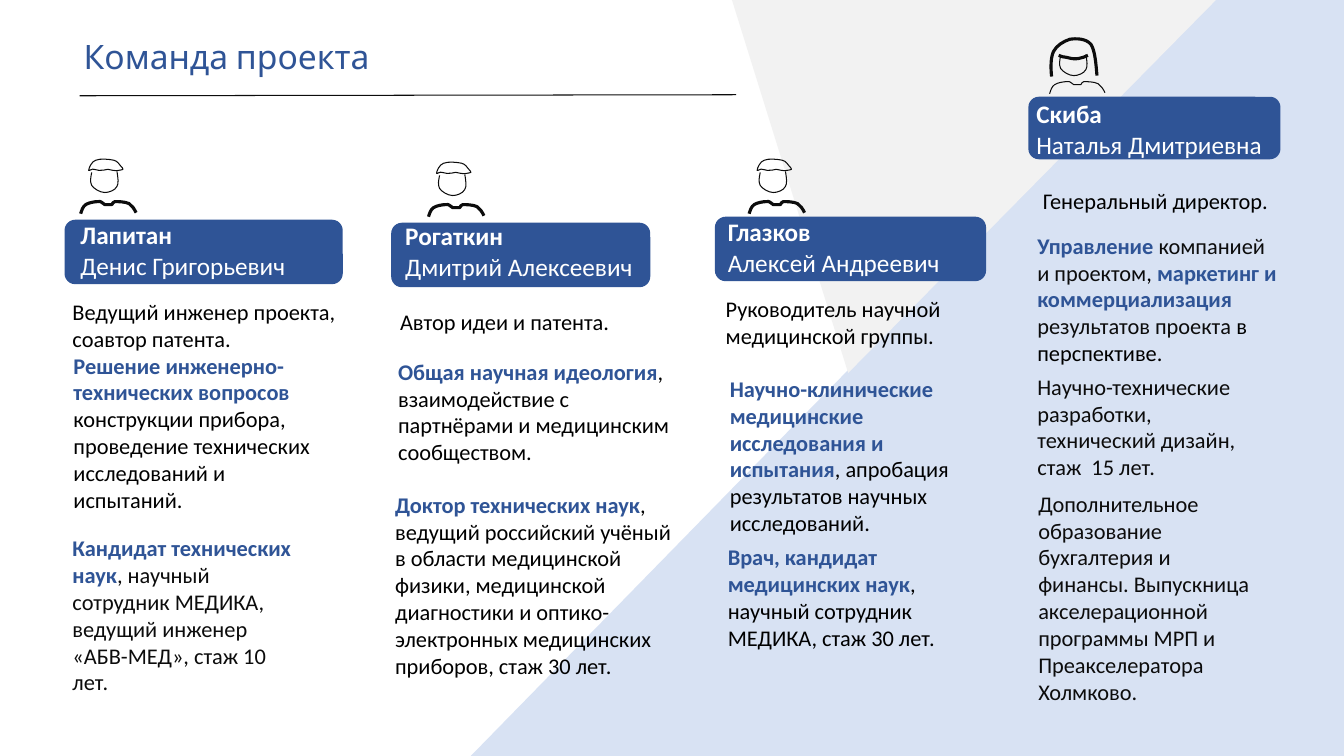
from dataclasses import dataclass

from lxml.etree import Element, SubElement
from pptx import Presentation
from pptx.dml.color import RGBColor
from pptx.enum.shapes import MSO_CONNECTOR, MSO_SHAPE as SHAPE
from pptx.enum.text import MSO_ANCHOR, MSO_AUTO_SIZE as FIT, PP_ALIGN as ALIGN
from pptx.oxml.ns import qn
from pptx.util import Inches, Pt

COLORS = {"navy": "2F5496", "sky": "D8E2F3", "grey": "F2F2F2",
          "white": "FFFFFF", "black": "000000", "ink": "0C0C0C"}

# Icon outlines in hundredths of an inch: a start point, then cubic curves
FACE = [(11, 14), (10, 19, 9, 23, 11, 27), (13, 30, 19, 34, 24, 34),
        (28, 34, 34, 32, 36, 28), (38, 25, 37, 19, 36, 13)]
SHOULDERS = [(0, 55), (1, 52, 2, 48, 5, 46), (8, 44, 14, 43, 17, 43),
             (21, 42, 21, 45, 24, 46), (26, 46, 29, 46, 31, 46),
             (33, 45, 31, 43, 34, 43), (37, 43, 44, 43, 48, 45),
             (51, 47, 53, 50, 55, 54)]
SHORT_HAIR = [(40, 8), (38, 6, 37, 3, 33, 2), (29, 1, 19, 0, 15, 2),
              (11, 3, 8, 10, 8, 12), (8, 13, 12, 10, 13, 11),
              (15, 11, 16, 12, 18, 12), (21, 13, 24, 11, 27, 11),
              (29, 11, 30, 12, 32, 12), (34, 13, 37, 12, 38, 12),
              (40, 11, 42, 12, 42, 11), (42, 10, 41, 9, 40, 8)]
LONG_HAIR = [(2, 38), (1, 29, 1, 19, 4, 13), (7, 7, 14, 3, 20, 1),
             (26, 0, 36, 0, 41, 6), (45, 12, 46, 25, 47, 37)]
FRINGE = [(9, 17), (12, 18, 14, 19, 17, 19), (21, 20, 25, 21, 29, 20),
          (32, 20, 35, 18, 38, 17)]
THIN, THICK = 0.75, 2.25

# Each icon part: outline, downward shift, line width
MAN = [(FACE, 0, THIN), (SHORT_HAIR, 0, THIN), (SHOULDERS, 0, THICK)]
WOMAN = [(FACE, 3, THIN), (SHOULDERS, 0, THIN), (LONG_HAIR, 0, THICK), (FRINGE, 0, THICK)]


@dataclass
class Member:
    """Offsets of icon, name and notes are measured from the badge corner."""
    surname: str
    given_names: str
    badge: tuple
    icon: list
    icon_offset: tuple
    name_box: tuple
    notes: list
    role_align: ALIGN = ALIGN.LEFT


def strong(text, color="navy"):
    return text, color, True


def plain(text, color="black"):
    return text, color, False


TEAM = [
    Member("Глазков", "Алексей Андреевич", (7.09, 2.15, 2.69, 0.64),
           MAN, (0.34, -0.58), (0.03, -0.05, 2.71, 0.98), [
               ((0.01, 0.73, 3, 0.64), [plain("Руководитель научной медицинской группы.")]),
               ((0.05, 1.52, 2.87, 1.72), [
                   strong("Научно-клинические медицинские исследования и испытания"),
                   plain(", апробация результатов научных исследований.")]),
               ((0.03, 3.19, 2.84, 1.18), [
                   strong("Врач, кандидат медицинских наук"),
                   plain(", научный сотрудник МЕДИКА, стаж 30 лет.")])]),
    Member("Рогаткин", "Дмитрий Алексеевич", (3.88, 2.21, 2.57, 0.64),
           MAN, (0.37, -0.61), (0.04, -0.07, 2.66, 0.98), [
               ((-0.01, 0.8, 3, 0.37), [plain("Автор идеи и патента.")]),
               ((-0.03, 1.29, 2.91, 1.18), [
                   strong("Общая научная идеология"),
                   plain(", взаимодействие с партнёрами и медицинским сообществом.")]),
               ((-0.06, 2.61, 3.05, 1.99), [
                   strong("Доктор технических наук"),
                   plain(", ведущий российский учёный в области медицинской физики, "
                         "медицинской диагностики и оптико-электронных медицинских "
                         "приборов, стаж 30 лет.")])]),
    Member("Скиба", "Наталья Дмитриевна", (10.2, 0.96, 2.5, 0.62),
           WOMAN, (0.21, -0.58), (-0.02, -0.03, 2.73, 0.71), [
               ((0.01, 0.85, 2.5, 0.37), [plain("Генеральный директор.")]),
               ((-0.01, 1.29, 2.58, 1.45), [
                   strong("Управление "), plain("компанией и проектом", "ink"), plain(", "),
                   strong("маркетинг и коммерциализация "),
                   plain("результатов проекта ", "ink"), plain("в перспективе.")]),
               ((-0.01, 2.69, 2.34, 1.18), [
                   plain("Научно-технические разработки, технический дизайн, "
                         "стаж  15 лет.", "ink")]),
               ((0, 3.85, 2.34, 2.26), [
                   plain("Дополнительное образование бухгалтерия и финансы. Выпускница "
                         "акселерационной программы МРП и Преакселератора Холмково.",
                         "ink")])],
           role_align=ALIGN.CENTER),
    Member("Лапитан", "Денис Григорьевич", (0.64, 2.18, 2.76, 0.64),
           MAN, (0.16, -0.61), (0.06, -0.05, 2.66, 0.98), [
               ((-0.02, 0.73, 2.88, 0.64), [plain("Ведущий инженер проекта, соавтор патента.")]),
               ((-0.01, 1.26, 2.82, 1.72), [
                   strong("Решение инженерно-технических вопросов "),
                   plain("конструкции прибора, проведение технических исследований "
                         "и испытаний.")]),
               ((-0.02, 3.07, 2.49, 1.72), [
                   strong("Кандидат технических наук"),
                   plain(", научный сотрудник МЕДИКА, ведущий инженер «АБВ-МЕД», "
                         "стаж 10 лет.", "ink")])]),
]


def rgb(color):
    return RGBColor.from_string(COLORS[color])


def inches(box):
    return [Inches(length) for length in box]


def shifted(box, left, top):
    return (left + box[0], top + box[1], *box[2:])


def write(frame, paragraphs, size=16, font="Calibri", align=ALIGN.LEFT, fit=FIT.NONE):
    frame.word_wrap = True
    frame.auto_size = fit
    frame.vertical_anchor = MSO_ANCHOR.TOP
    for number, pieces in enumerate(paragraphs):
        paragraph = frame.add_paragraph() if number else frame.paragraphs[0]
        paragraph.alignment = align
        for text, color, bold in pieces:
            run = paragraph.add_run()
            run.text = text
            run.font.size, run.font.name, run.font.bold = Pt(size), font, bold
            run.font.color.rgb = rgb(color)


def add_filled(slide, kind, box, color):
    shape = slide.shapes.add_shape(kind, *inches(box))
    shape.shadow.inherit = False
    shape.fill.solid()
    shape.fill.fore_color.rgb = rgb(color)
    shape.line.fill.background()
    return shape


def add_background(slide, width, height):
    edge = 12
    slope = add_filled(slide, SHAPE.RIGHT_TRIANGLE, (4.67, 0, edge - 4.67, height), "sky")
    slope._element.spPr.find(qn("a:xfrm")).set("flipH", "1")
    add_filled(slide, SHAPE.RECTANGLE, (edge, 0, width - edge, height), "sky")
    wedge = add_filled(slide, SHAPE.ISOSCELES_TRIANGLE, (7.26, 0, 4.8, 3.7), "grey")
    wedge.adjustments[0] = 0.76
    wedge.rotation = 180


def add_heading(slide, left, top, width, height):
    title = slide.shapes.title
    title.left, title.top, title.width, title.height = inches((left, top, width, height))
    write(title.text_frame, [[plain("Команда проекта", "navy")]],
          size=24, font="Cabin", fit=FIT.SHAPE_TO_FIT_TEXT)
    start, end = (left + 0.06, top + 0.64), (left + 6.57, top + 0.63)
    rule = slide.shapes.add_connector(MSO_CONNECTOR.STRAIGHT, *inches(start + end))
    rule.line.color.rgb, rule.line.width = rgb("ink"), Pt(THIN)
    SubElement(rule._element.spPr, qn("a:effectLst"))


def add_curve(slide, outline, left, top, line_width):
    """Draws a chain of cubic curves without fill."""
    start, *curves = [[Inches((left if i % 2 == 0 else top) + value / 100)
                       for i, value in enumerate(point)] for point in outline]
    builder = slide.shapes.build_freeform(*start)
    builder.add_line_segments([curve[-2:] for curve in curves],
                              close=outline[0] == outline[-1][-2:])
    stroke = builder.convert_to_shape()
    segments = list(stroke._element.iter(qn("a:lnTo")))
    for segment, curve in zip(segments, curves):
        bezier = Element(qn("a:cubicBezTo"))
        for x, y in zip(curve[::2], curve[1::2]):
            SubElement(bezier, qn("a:pt"), x=str(x - stroke.left), y=str(y - stroke.top))
        segment.getparent().replace(segment, bezier)
    stroke.shadow.inherit = False
    stroke.fill.background()
    stroke.line.color.rgb, stroke.line.width = rgb("ink"), Pt(line_width)


def add_member(slide, member):
    left, top = member.badge[:2]
    add_filled(slide, SHAPE.ROUNDED_RECTANGLE, member.badge, "navy")
    icon_left, icon_top = shifted(member.icon_offset, left, top)
    for outline, drop, line_width in member.icon:
        add_curve(slide, outline, icon_left, icon_top + drop / 100, line_width)
    name = slide.shapes.add_textbox(*inches(shifted(member.name_box, left, top)))
    write(name.text_frame,
          [[strong(member.surname, "white")], [plain(member.given_names, "white")]],
          size=18, fit=FIT.SHAPE_TO_FIT_TEXT)
    for number, (box, pieces) in enumerate(member.notes):
        note = slide.shapes.add_textbox(*inches(shifted(box, left, top)))
        write(note.text_frame, [pieces], align=ALIGN.LEFT if number else member.role_align)


def main():
    width, height = 13.33, 7.5
    deck = Presentation()
    deck.slide_width, deck.slide_height = inches((width, height))
    slide = deck.slides.add_slide(deck.slide_layouts[5])
    add_heading(slide, 0.73, 0.31, 11.29, 0.5)
    add_background(slide, width, height)
    for member in TEAM:
        add_member(slide, member)
    deck.save("out.pptx")


if __name__ == "__main__":
    main()
